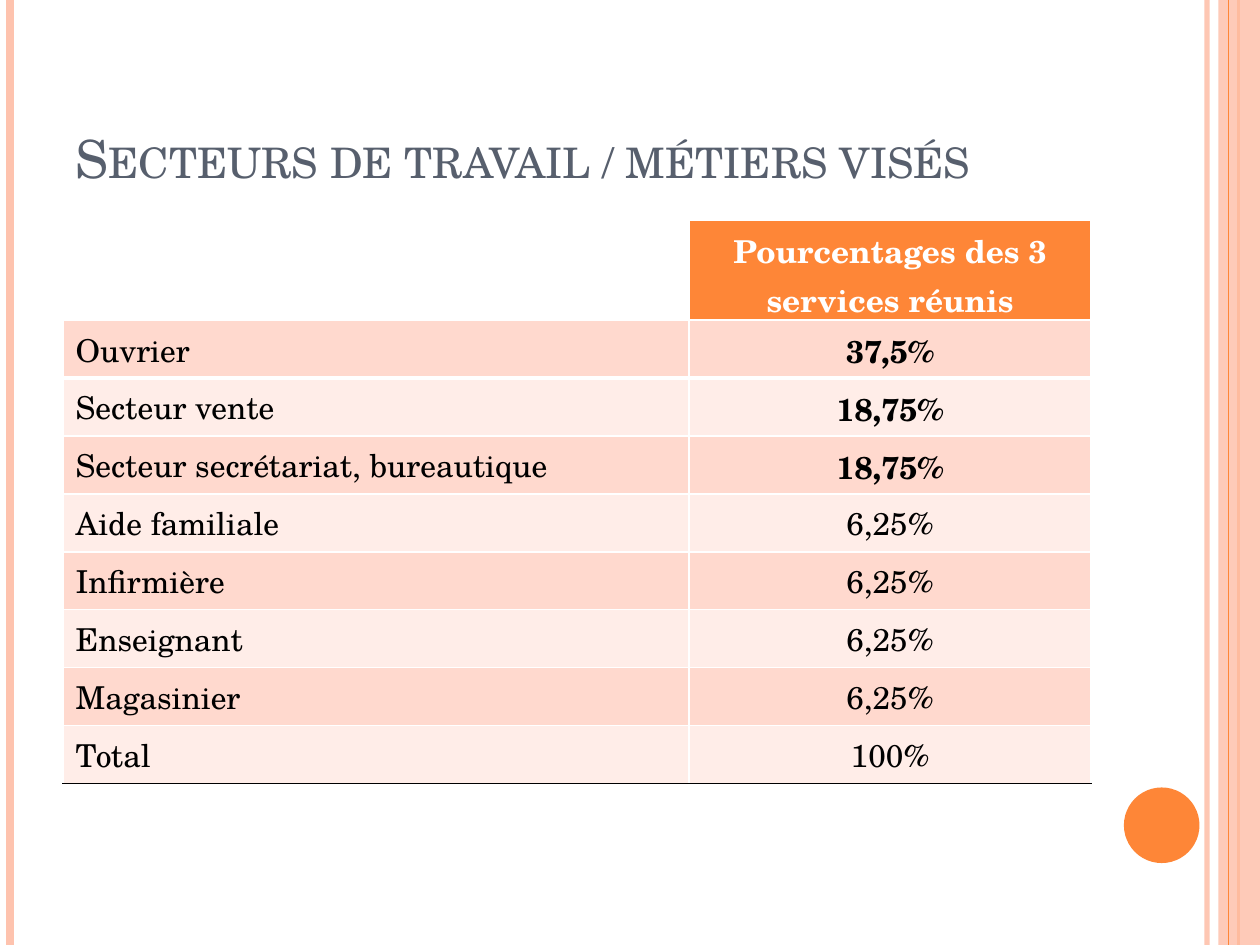
from dataclasses import dataclass

from lxml.etree import SubElement
from pptx import Presentation
from pptx.dml.color import RGBColor
from pptx.enum.shapes import MSO_CONNECTOR, MSO_SHAPE
from pptx.enum.text import MSO_ANCHOR, PP_ALIGN
from pptx.oxml import parse_xml
from pptx.oxml.ns import nsdecls, qn
from pptx.util import Inches, Pt


@dataclass(frozen=True)
class Theme:
    font: str = "TeX Gyre Schola"
    title_size: int = 30
    body_size: int = 18
    title: str = "575F6D"
    accent: str = "FE8637"
    pale: str = "FEC3AE"
    bands: tuple = ("FFD9CE", "FFEDE8")
    text: str = "000000"
    white: str = "FFFFFF"


class SlideBuilder:
    """Draws styled elements on the current slide."""

    def __init__(self, slide, theme):
        self.slide = slide
        self.theme = theme

    def paint(self, fill, color, opacity=100):
        fill.solid()
        fill.fore_color.rgb = RGBColor.from_string(color)
        if opacity < 100:
            color_element = fill._xPr.find(".//" + qn("a:srgbClr"))
            SubElement(color_element, qn("a:alpha")).set("val", str(opacity * 1000))

    def set_text(self, paragraph, text, size, color, bold=False, align=PP_ALIGN.LEFT):
        paragraph.text = text
        paragraph.alignment = align
        font = paragraph.font
        font.name, font.size, font.bold = self.theme.font, Pt(size), bold
        font.color.rgb = RGBColor.from_string(color)

    def vertical_line(self, x, color, width, opacity=100):
        connector = self.slide.shapes.add_connector(
            MSO_CONNECTOR.STRAIGHT, Inches(x), 0, Inches(x), Inches(7.5))
        connector.line.width = Pt(width)
        self.paint(connector.line.fill, color, opacity)
        SubElement(connector._element.spPr, qn("a:effectLst"))

    def shape(self, kind, left, top, width, height, color, opacity=100):
        shape = self.slide.shapes.add_shape(
            kind, Inches(left), Inches(top), Inches(width), Inches(height))
        shape.shadow.inherit = False
        shape.line.fill.background()
        self.paint(shape.fill, color, opacity)

    def title(self, text, left, top, width, height):
        box = self.slide.shapes.add_textbox(
            Inches(left), Inches(top), Inches(width), Inches(height))
        frame = box.text_frame
        frame.word_wrap = True
        frame.vertical_anchor = MSO_ANCHOR.BOTTOM
        paragraph = frame.paragraphs[0]
        self.set_text(paragraph, text, self.theme.title_size, self.theme.title)
        paragraph.font._element.set("cap", "small")

    def borders(self, cell, top, bottom):
        side = (self.theme.white, 1)
        properties = cell._tc.get_or_add_tcPr()
        edges = {"lnL": side, "lnR": side, "lnT": top, "lnB": bottom}
        for index, (tag, (color, width)) in enumerate(edges.items()):
            properties.insert(index, parse_xml(
                f'<a:{tag} {nsdecls("a")} w="{Pt(width)}"><a:solidFill>'
                f'<a:srgbClr val="{color}"/></a:solidFill></a:{tag}>'))

    def table(self, header, rows, left, top, column_widths, header_height, row_height):
        theme = self.theme
        height = header_height + row_height * len(rows)
        table = self.slide.shapes.add_table(
            len(rows) + 1, 2, Inches(left), Inches(top),
            Inches(sum(column_widths)), Inches(height)).table
        for column, width in zip(table.columns, column_widths):
            column.width = Inches(width)
        thin, thick, total = (theme.white, 1), (theme.white, 3), (theme.text, 1)
        edges = [thin, thick] + [thin] * (len(rows) - 2) + [total, thin]
        for index, values in enumerate([("", header, True), *rows]):
            *texts, bold = values
            is_header = index == 0
            table.rows[index].height = Inches(header_height if is_header else row_height)
            for column, text in enumerate(texts):
                cell = table.cell(index, column)
                if is_header and column == 0:
                    cell.fill.background()
                else:
                    self.paint(cell.fill, theme.accent if is_header
                               else theme.bands[(index - 1) % 2])
                if column == 1:
                    cell.vertical_anchor = MSO_ANCHOR.MIDDLE
                self.set_text(cell.text_frame.paragraphs[0], text, theme.body_size,
                              theme.white if is_header else theme.text,
                              bold and column == 1,
                              PP_ALIGN.CENTER if column else PP_ALIGN.LEFT)
                self.borders(cell, edges[index - 1] if index else thin, edges[index])


def main():
    presentation = Presentation()
    presentation.slide_width, presentation.slide_height = Inches(10), Inches(7.5)
    theme = Theme()
    builder = SlideBuilder(
        presentation.slides.add_slide(presentation.slide_layouts[6]), theme)

    builder.vertical_line(9.58, theme.pale, 3, opacity=93)
    builder.vertical_line(0.08, theme.pale, 4.5)
    builder.vertical_line(9.83, theme.accent, 1.5)
    builder.shape(MSO_SHAPE.RECTANGLE, 9.67, 0, 0.33, 7.5, theme.pale, opacity=87)
    builder.vertical_line(9.75, theme.accent, 0.75)
    builder.shape(MSO_SHAPE.OVAL, 8.92, 6.25, 0.6, 0.6, theme.accent)

    builder.title("Secteurs de travail / métiers visés", 0.5, 0.3, 8.17, 1.25)
    rows = [
        ("Ouvrier", "37,5%", True),
        ("Secteur vente", "18,75%", True),
        ("Secteur secrétariat, bureautique", "18,75%", True),
        ("Aide familiale", "6,25%", False),
        ("Infirmière", "6,25%", False),
        ("Enseignant", "6,25%", False),
        ("Magasinier", "6,25%", False),
        ("Total", "100%", False),
    ]
    builder.table("Pourcentages des 3 services réunis", rows, 0.5, 1.75,
                  (4.97, 3.19), header_height=0.79, row_height=0.46)
    presentation.save("out.pptx")


if __name__ == "__main__":
    main()
